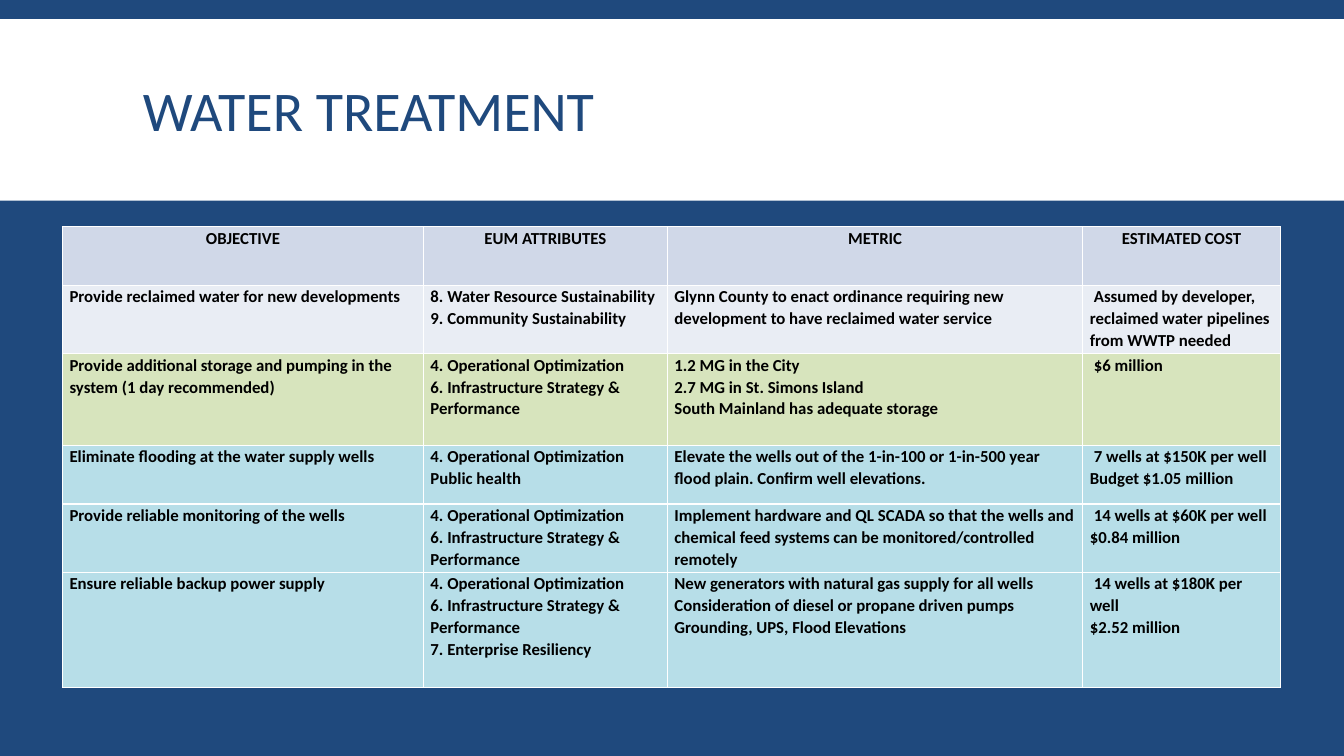
from lxml import etree
from pptx import Presentation, util as u
from pptx.dml.color import RGBColor
from pptx.enum import shapes, text
from pptx.oxml import ns

WIDTH, HEIGHT = u.Inches(13.33), u.Inches(7.5)
NAVY = RGBColor(0x1F, 0x49, 0x7D)
WHITE = RGBColor(0xFF, 0xFF, 0xFF)
BLACK = RGBColor(0, 0, 0)
HEADER = RGBColor(0xD0, 0xD8, 0xE8)
PALE = RGBColor(0xE9, 0xED, 0xF4)
GREEN = RGBColor(0xD7, 0xE4, 0xBD)
AQUA = RGBColor(0xB7, 0xDE, 0xE8)

TITLE_FONT = {"name": "Calibri", "size": u.Pt(40)}
CELL_FONT = {"name": "Calibri", "size": u.Pt(12), "bold": True}
CELL_MARGINS = {"margin_left": u.Inches(0.07), "margin_right": u.Inches(0.07),
                "margin_top": 0, "margin_bottom": 0}

COLUMN_WIDTHS = [3.58, 2.42, 4.12, 1.96]
COST_COLUMN = 3
OPTIMIZATION = "4. Operational Optimization"
STRATEGY = "6. Infrastructure Strategy & Performance"

# Each row: height in inches, fill, cell texts with one line per paragraph
ROWS = [
    (0.58, HEADER, ["OBJECTIVE", "EUM ATTRIBUTES", "METRIC", "ESTIMATED COST"]),
    (0.68, PALE, [
        "Provide reclaimed water for new developments",
        "8. Water Resource Sustainability\n9. Community Sustainability",
        "Glynn County to enact ordinance requiring new development to have "
        "reclaimed water service",
        "Assumed by developer, reclaimed water pipelines from WWTP needed"]),
    (0.91, GREEN, [
        "Provide additional storage and pumping in the system (1 day recommended)",
        f"{OPTIMIZATION}\n{STRATEGY}",
        "1.2 MG in the City\n2.7 MG in St. Simons Island\n"
        "South Mainland has adequate storage",
        "$6 million"]),
    (0.58, AQUA, [
        "Eliminate flooding at the water supply wells",
        f"{OPTIMIZATION}\nPublic health",
        "Elevate the wells out of the 1-in-100 or 1-in-500 year flood plain. "
        "Confirm well elevations.",
        "7 wells at $150K per well\nBudget $1.05 million"]),
    (0.68, AQUA, [
        "Provide reliable monitoring of the wells",
        f"{OPTIMIZATION}\n{STRATEGY}",
        "Implement hardware and QL SCADA so that the wells and chemical feed "
        "systems can be monitored/controlled remotely",
        "14 wells at $60K per well\n$0.84 million"]),
    (1.14, AQUA, [
        "Ensure reliable backup power supply",
        f"{OPTIMIZATION}\n{STRATEGY}\n7. Enterprise Resiliency",
        "New generators with natural gas supply for all wells\n"
        "Consideration of diesel or propane driven pumps\n"
        "Grounding, UPS, Flood Elevations",
        "14 wells at $180K per well\n$2.52 million"]),
]


def set_values(target, values):
    for name, value in values.items():
        setattr(target, name, value)


def style_paragraph(paragraph, font, color, spacing, alignment):
    paragraph.line_spacing = spacing
    paragraph.alignment = alignment
    set_values(paragraph.font, font)
    paragraph.font.color.rgb = color


def add_title_band(slide, left, top, width, height):
    """White band with the title inset from its left edge."""
    band = slide.shapes.add_shape(shapes.MSO_SHAPE.RECTANGLE, left, top, width, height)
    band.shadow.inherit = False
    band.fill.solid()
    band.fill.fore_color.rgb = WHITE
    band.line.fill.background()

    title = slide.shapes.add_textbox(left + int(width * 0.099), top + u.Inches(0.12),
                                     int(width * 0.803), u.Inches(1.65))
    frame = title.text_frame
    set_values(frame, {"word_wrap": True, "vertical_anchor": text.MSO_ANCHOR.MIDDLE,
                       "text": "WATER TREATMENT"})
    style_paragraph(frame.paragraphs[0], TITLE_FONT, NAVY, 0.85, text.PP_ALIGN.LEFT)


def add_borders(cell, color):
    properties = cell._tc.get_or_add_tcPr()
    for side in ("a:lnL", "a:lnR", "a:lnT", "a:lnB"):
        line = etree.SubElement(properties, ns.qn(side), w=str(u.Pt(1)))
        fill = etree.SubElement(line, ns.qn("a:solidFill"))
        etree.SubElement(fill, ns.qn("a:srgbClr"), val=str(color))


def fill_cell(cell, content, fill, alignment, first_indent):
    add_borders(cell, WHITE)
    cell.fill.solid()
    cell.fill.fore_color.rgb = fill
    set_values(cell, CELL_MARGINS)
    cell.text = content
    paragraphs = cell.text_frame.paragraphs
    for paragraph in paragraphs:
        style_paragraph(paragraph, CELL_FONT, BLACK, 1.07, alignment)
    if first_indent:
        paragraphs[0]._p.get_or_add_pPr().set("indent", str(first_indent))


def add_objectives_table(slide, left, top, width, height):
    """Objectives table with one fill per row."""
    table = slide.shapes.add_table(len(ROWS), len(COLUMN_WIDTHS),
                                   left, top, width, height).table
    for column, share in zip(table.columns, COLUMN_WIDTHS):
        column.width = int(width * share / sum(COLUMN_WIDTHS))
    for row_index, (row_height, fill, contents) in enumerate(ROWS):
        table.rows[row_index].height = u.Inches(row_height)
        is_header = row_index == 0
        alignment = text.PP_ALIGN.CENTER if is_header else text.PP_ALIGN.LEFT
        for column_index, content in enumerate(contents):
            is_cost = column_index == COST_COLUMN and not is_header
            fill_cell(table.cell(row_index, column_index), content, fill, alignment,
                      u.Inches(0.04) if is_cost else 0)


def main():
    presentation = Presentation()
    set_values(presentation, {"slide_width": WIDTH, "slide_height": HEIGHT})
    slide = presentation.slides.add_slide(presentation.slide_layouts[6])
    slide.background.fill.solid()
    slide.background.fill.fore_color.rgb = NAVY

    add_title_band(slide, 0, u.Inches(0.19), WIDTH, u.Inches(1.8))
    add_objectives_table(slide, u.Inches(0.62), u.Inches(2.25),
                         u.Inches(sum(COLUMN_WIDTHS)),
                         u.Inches(sum(row[0] for row in ROWS)))
    presentation.save("out.pptx")


if __name__ == "__main__":
    main()
